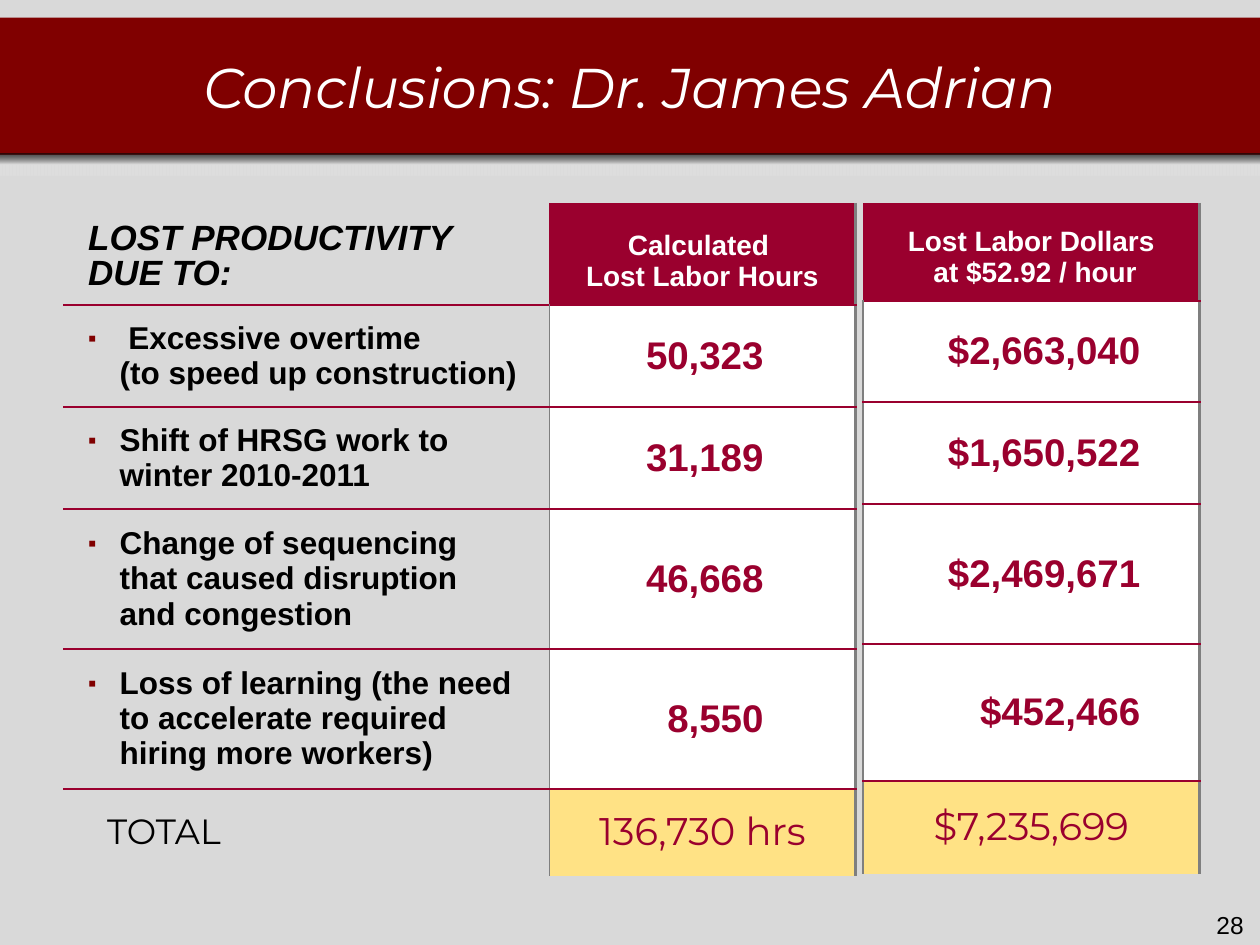
from copy import deepcopy
from dataclasses import dataclass

from lxml import etree
from pptx import Presentation
from pptx.dml.color import RGBColor
from pptx.enum.shapes import MSO_SHAPE
from pptx.enum.text import MSO_ANCHOR, PP_ALIGN
from pptx.oxml.ns import qn
from pptx.util import Inches, Pt

RECTANGLE = MSO_SHAPE.RECTANGLE
LEFT, CENTER, RIGHT = PP_ALIGN.LEFT, PP_ALIGN.CENTER, PP_ALIGN.RIGHT
TOP, MIDDLE, BOTTOM = MSO_ANCHOR.TOP, MSO_ANCHOR.MIDDLE, MSO_ANCHOR.BOTTOM
NO_STYLE_TABLE = "{2D5ABB26-0587-4C30-8999-92F81FD0307C}"


@dataclass(frozen=True)
class Theme:
    background: str = "D9D9D9"
    banner: str = "800000"
    crimson: str = "9A002E"
    grey: str = "7F7F7F"
    fade: str = "DDDDDD"
    total: str = "FFE285"
    white: str = "FFFFFF"
    black: str = "000000"
    body_font: str = "Arial"
    display_font: str = "Montserrat"
    title_size: int = 32
    value_size: int = 22
    heading_size: int = 20
    cause_size: int = 18
    column_size: int = 16
    number_size: int = 14


theme = Theme()


def write_text(frame, text, size, color, font=theme.body_font, bold=False,
               italic=False, align=LEFT, spacing=None):
    """Fill the first paragraph, with a line break at each newline."""
    paragraph = frame.paragraphs[0]
    paragraph.alignment = align
    if spacing:
        paragraph.line_spacing = spacing
    for index, line in enumerate(text.split("\n")):
        if index:
            paragraph.add_line_break()
            line_break = paragraph._p.findall(qn("a:br"))[-1]
            line_break.append(deepcopy(run._r.rPr))
        run = paragraph.add_run()
        run.text = line
        run.font.size = Pt(size)
        run.font.name = font
        run.font.bold = bold
        run.font.italic = italic
        run.font.color.rgb = RGBColor.from_string(color)
    return paragraph


def add_tab_stop(paragraph, position, kind):
    tab_list = etree.SubElement(paragraph._p.get_or_add_pPr(), qn("a:tabLst"))
    etree.SubElement(tab_list, qn("a:tab"), pos=str(Inches(position)), algn=kind)


presentation = Presentation()
presentation.slide_width = Inches(10)
presentation.slide_height = Inches(7.5)
slide = presentation.slides.add_slide(presentation.slide_layouts[6])

# Background, banner and the fading shade under the banner
for top, height, color in (
    (0, 7.5, theme.background),
    (0.14, 1.09, theme.banner),
    (1.22, 0.17, None),
):
    shape = slide.shapes.add_shape(
        RECTANGLE, Inches(0), Inches(top), Inches(10), Inches(height))
    shape.shadow.inherit = False
    shape.line.fill.background()
    if color:
        shape.fill.solid()
        shape.fill.fore_color.rgb = RGBColor.from_string(color)
    else:
        shape.fill.gradient()
        shape.fill.gradient_angle = 270
        start, end = shape.fill.gradient_stops
        start.color.rgb = RGBColor.from_string(theme.black)
        end.color.rgb = RGBColor.from_string(theme.fade)
        start.position, end.position = 0, 0.5
        dark = shape._element.spPr.find(".//" + qn("a:srgbClr"))
        etree.SubElement(dark, qn("a:alpha"), val="68000")

# Tables: a column is its kind followed by its texts
causes = ("cause", [
    "LOST PRODUCTIVITY \nDUE TO:",
    " Excessive overtime \n(to speed up construction)",
    "Shift of HRSG work to \nwinter 2010-2011",
    "Change of sequencing \nthat caused disruption \nand congestion",
    "Loss of learning (the need to accelerate required hiring more workers)",
    "TOTAL",
])
hours = ("hours", [
    "Calculated \nLost Labor Hours",
    "50,323", "31,189", "46,668", "8,550", "136,730 hrs",
])
dollars = ("dollars", [
    "Lost Labor Dollars\n at $52.92 / hour",
    "$2,663,040", "$1,650,522", "$2,469,671", "$452,466", "$7,235,699",
])
tab_stops = {"hours": 1.5, "dollars": 2}

for left, widths, heights, columns in (
    (0.5, (3.86, 2.43), (0.81, 0.81, 0.81, 1.11, 1.11, 0.69), (causes, hours)),
    (6.85, (2.67,), (0.78, 0.8, 0.81, 1.11, 1.09, 0.74), (dollars,)),
):
    table = slide.shapes.add_table(
        len(heights), len(widths), Inches(left), Inches(1.61),
        Inches(sum(widths)), Inches(sum(heights))).table
    table.first_row = table.horz_banding = False
    table._tbl.find(".//" + qn("a:tableStyleId")).text = NO_STYLE_TABLE
    for row, height in zip(table.rows, heights):
        row.height = Inches(height)
    last = len(heights) - 1

    for column_index, (kind, texts) in enumerate(columns):
        table.columns[column_index].width = Inches(widths[column_index])
        is_cause = kind == "cause"
        for row_index, text in enumerate(texts):
            cell = table.cell(row_index, column_index)
            cell.margin_left = cell.margin_right = Inches(0.2)
            cell.margin_top = cell.margin_bottom = Inches(0.1)
            cell.vertical_anchor = MIDDLE if row_index else BOTTOM
            frame = cell.text_frame

            borders = {}
            if not is_cause:
                if row_index:
                    borders["L"] = (theme.grey, 1)
                borders["R"] = (theme.grey, 2.25)
            elif row_index:
                borders["R"] = (theme.grey, 1)
            if row_index:
                borders["T"] = (theme.crimson, 1.5)
            if row_index < last:
                borders["B"] = (theme.crimson, 1.5)
            properties = cell._tc.get_or_add_tcPr()
            for side, (color, width) in borders.items():
                line = etree.SubElement(
                    properties, qn("a:ln" + side), w=str(Pt(width)))
                solid = etree.SubElement(line, qn("a:solidFill"))
                etree.SubElement(solid, qn("a:srgbClr"), val=color)

            if is_cause:
                cell.fill.background()
            else:
                fill = {0: theme.crimson, last: theme.total}.get(row_index, theme.white)
                cell.fill.solid()
                cell.fill.fore_color.rgb = RGBColor.from_string(fill)

            if row_index == 0 and is_cause:
                write_text(frame, text, theme.heading_size, theme.black,
                           bold=True, italic=True, spacing=0.9)
            elif row_index == 0:
                write_text(frame, text, theme.column_size, theme.white,
                           bold=True, align=CENTER)
            elif row_index == last and is_cause:
                paragraph = write_text(frame, text, theme.heading_size,
                                       theme.black, theme.display_font)
                paragraph._p.get_or_add_pPr().set("marL", str(Inches(0.15)))
            elif row_index == last:
                write_text(frame, text, theme.value_size, theme.crimson,
                           theme.display_font, align=CENTER,
                           spacing=0.9 if kind == "dollars" else None)
            elif is_cause:
                paragraph = write_text(frame, text, theme.cause_size,
                                       theme.black, bold=True)
                bullet = paragraph._p.get_or_add_pPr()
                bullet.set("marL", str(Inches(0.25)))
                bullet.set("indent", str(Inches(-0.25)))
                bullet_color = etree.SubElement(bullet, qn("a:buClr"))
                etree.SubElement(bullet_color, qn("a:srgbClr"), val=theme.banner)
                etree.SubElement(bullet, qn("a:buSzPct"), val="75000")
                etree.SubElement(bullet, qn("a:buFont"), typeface=theme.body_font)
                etree.SubElement(bullet, qn("a:buChar"), char="▪")
                add_tab_stop(paragraph, 0.25, "l")
            else:
                paragraph = write_text(frame, "\t" + text, theme.value_size,
                                       theme.crimson, bold=True)
                add_tab_stop(paragraph, tab_stops[kind], "dec")

# Title and page number
for text, left, top, width, height, anchor, style in (
    ("Conclusions: Dr. James Adrian", 0, 0.22, 10, 0.92, MIDDLE,
     dict(size=theme.title_size, color=theme.white, font=theme.display_font,
          italic=True, align=CENTER)),
    ("28", 7.64, 7.17, 2.33, 0.33, TOP,
     dict(size=theme.number_size, color=theme.black, align=RIGHT)),
):
    frame = slide.shapes.add_textbox(
        Inches(left), Inches(top), Inches(width), Inches(height)).text_frame
    frame.word_wrap = True
    frame.vertical_anchor = anchor
    write_text(frame, text, **style)

presentation.save("out.pptx")
